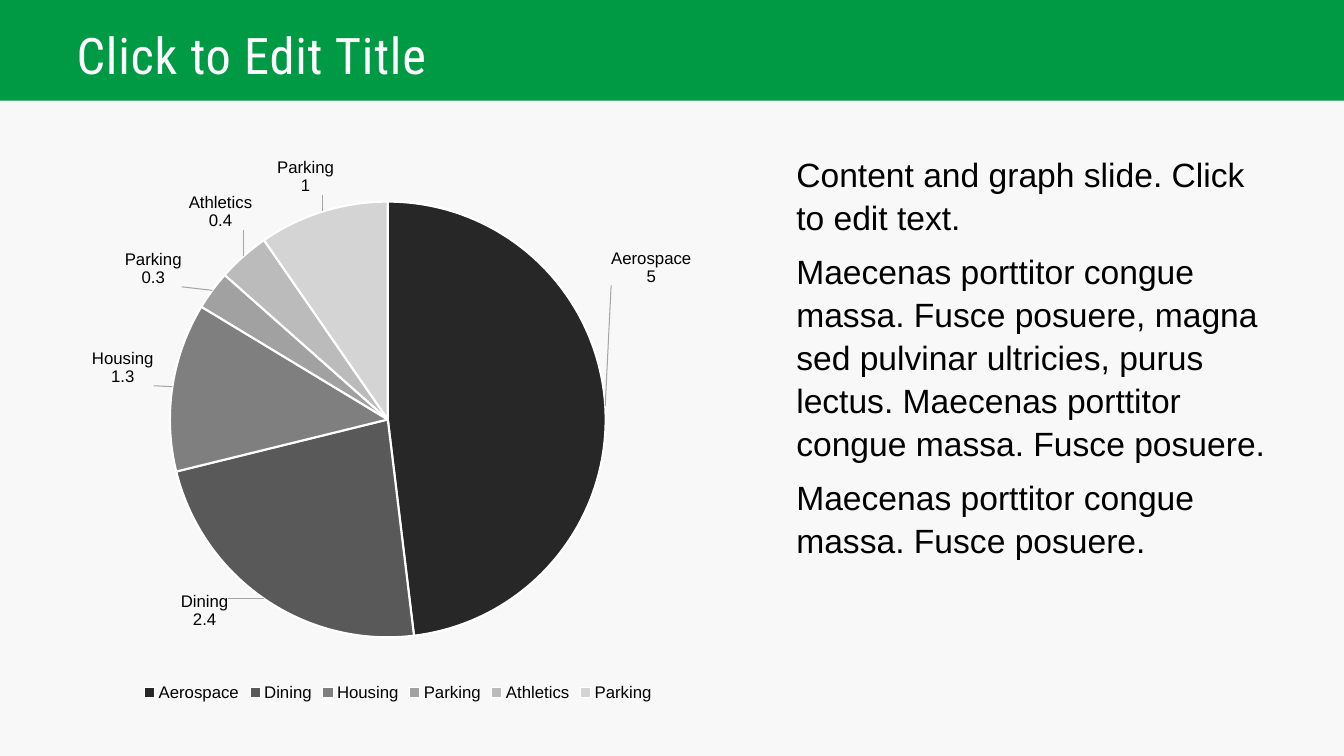
from dataclasses import dataclass

from lxml import etree
from pptx import Presentation
from pptx.chart.chart import Chart
from pptx.chart.data import CategoryChartData
from pptx.dml.color import RGBColor
from pptx.enum.chart import XL_CHART_TYPE, XL_LABEL_POSITION, XL_LEGEND_POSITION
from pptx.enum.shapes import MSO_SHAPE
from pptx.enum.text import MSO_ANCHOR, PP_ALIGN
from pptx.oxml import parse_xml
from pptx.oxml.ns import nsdecls, qn
from pptx.util import Pt

PIE = XL_CHART_TYPE.PIE
OUTSIDE = XL_LABEL_POSITION.OUTSIDE_END
BOTTOM = XL_LEGEND_POSITION.BOTTOM
RECT = MSO_SHAPE.RECTANGLE
MIDDLE = MSO_ANCHOR.MIDDLE
LEFT = PP_ALIGN.LEFT

COLORS = {
    "page": "F8F8F8",
    "band": "009A44",
    "white": "FFFFFF",
    "text": "000000",
    "leader": "A6A6A6",
}


@dataclass
class Slice:
    name: str
    value: float
    fill: str
    dx: float  # label shift, as a share of the chart size
    dy: float


SLICES = [
    Slice("Aerospace", 5, "272727", 0, -0.25),
    Slice("Dining", 2.4, "595959", -0.05, -0.02),
    Slice("Housing", 1.3, "7F7F7F", -0.02, 0),
    Slice("Parking", 0.3, "A1A1A1", -0.04, 0),
    Slice("Athletics", 0.4, "BBBBBB", 0.02, -0.04),
    Slice("Parking", 1, "D4D4D4", 0.02, -0.02),
]

BODY = [
    "Content and graph slide. Click to edit text.",
    "Maecenas porttitor congue massa. Fusce posuere, magna sed pulvinar "
    "ultricies, purus lectus. Maecenas porttitor congue massa. Fusce posuere.",
    "Maecenas porttitor congue massa. Fusce posuere.",
]


def rgb(key: str) -> RGBColor:
    return RGBColor.from_string(COLORS[key])


def style(font, name: str, size: float, color: str) -> None:
    font.name = name
    font.size = Pt(size)
    font.color.rgb = rgb(color)


def clear(frame, top: float = 0) -> None:
    frame.word_wrap = True
    frame.margin_left = frame.margin_right = frame.margin_bottom = 0
    frame.margin_top = Pt(top)


def label_xml(index: int, part: Slice) -> etree._Element:
    return parse_xml(
        f'<c:dLbl {nsdecls("c")}><c:idx val="{index}"/>'
        f'<c:layout><c:manualLayout><c:x val="{part.dx}"/><c:y val="{part.dy}"/>'
        '</c:manualLayout></c:layout><c:dLblPos val="outEnd"/>'
        '<c:showLegendKey val="0"/><c:showVal val="1"/><c:showCatName val="1"/>'
        '<c:showSerName val="0"/><c:showPercent val="0"/><c:showBubbleSize val="0"/>'
        "<c:separator>\n</c:separator></c:dLbl>"
    )


def add_labels(chart: Chart) -> None:
    labels = chart.plots[0].series[0].data_labels
    style(labels.font, "Arial", 12, "text")
    labels.position = OUTSIDE
    labels.show_value = labels.show_category_name = True
    root = chart.element.xpath(".//c:ser/c:dLbls")[0]
    for index, part in enumerate(SLICES):
        root.insert(index, label_xml(index, part))
    for old in root.findall(qn("c:showLeaderLines")):
        root.remove(old)
    etree.SubElement(root, qn("c:separator")).text = "\n"
    etree.SubElement(root, qn("c:showLeaderLines")).set("val", "1")
    root.append(parse_xml(
        f'<c:leaderLines {nsdecls("c", "a")}><c:spPr><a:ln w="9525"><a:solidFill>'
        f'<a:srgbClr val="{COLORS["leader"]}"/></a:solidFill></a:ln></c:spPr>'
        "</c:leaderLines>"
    ))


def set_plot(chart: Chart, x: float, y: float, w: float, h: float) -> None:
    area = chart.element.xpath(".//c:plotArea")[0]
    for old in area.findall(qn("c:layout")):
        area.remove(old)
    area.insert(0, parse_xml(
        f'<c:layout {nsdecls("c")}><c:manualLayout><c:layoutTarget val="inner"/>'
        '<c:xMode val="edge"/><c:yMode val="edge"/>'
        f'<c:x val="{x}"/><c:y val="{y}"/><c:w val="{w}"/><c:h val="{h}"/>'
        "</c:manualLayout></c:layout>"
    ))


def add_pie(slide) -> None:
    data = CategoryChartData()
    data.categories = [part.name for part in SLICES]
    data.add_series("Series 1", [part.value for part in SLICES])
    frame = slide.shapes.add_chart(PIE, Pt(54), Pt(108), Pt(460.8), Pt(396), data)
    chart = frame.chart
    chart.has_title = False
    style(chart.font, "Arial", 12, "text")
    chart.has_legend = True
    chart.legend.position = BOTTOM
    chart.legend.include_in_layout = False
    style(chart.legend.font, "Arial", 12, "text")
    plot = chart.plots[0]
    plot.vary_by_categories = True
    for index, part in enumerate(SLICES):
        look = plot.series[0].points[index].format
        look.fill.solid()
        look.fill.fore_color.rgb = RGBColor.from_string(part.fill)
        look.line.color.rgb = rgb("white")
        look.line.width = Pt(1.5)
    add_labels(chart)
    set_plot(chart, 0.146, 0.091, 0.676, 0.786)


def add_title(slide) -> None:
    title = slide.shapes.title
    title.left, title.top, title.width, title.height = Pt(54.7), 0, Pt(720), Pt(72)
    frame = title.text_frame
    frame.text = "Click to Edit Title"
    clear(frame, 10.8)
    frame.vertical_anchor = MIDDLE
    line = frame.paragraphs[0]
    line.alignment = LEFT
    line.line_spacing = 0.9
    style(line.runs[0].font, "Roboto Condensed", 36, "white")
    title.element.xpath(".//a:rPr")[0].set("spc", "60")

    # Green band behind the title
    band = slide.shapes.add_shape(RECT, 0, 0, Pt(960), Pt(72))
    band.shadow.inherit = False
    band.fill.solid()
    band.fill.fore_color.rgb = rgb("band")
    band.line.fill.background()
    title.element.addprevious(band.element)


def add_body(slide) -> None:
    box = slide.shapes.add_textbox(Pt(568.8), Pt(108), Pt(337.7), Pt(396))
    frame = box.text_frame
    clear(frame)
    frame.text = "\n".join(BODY)
    for line in frame.paragraphs:
        line.line_spacing = Pt(30.8)
        line.space_before = Pt(7.5)
        style(line.runs[0].font, "Arial", 24, "text")


def main() -> None:
    deck = Presentation()
    deck.slide_width, deck.slide_height = Pt(960), Pt(540)
    slide = deck.slides.add_slide(deck.slide_layouts[5])
    slide.background.fill.solid()
    slide.background.fill.fore_color.rgb = rgb("page")
    add_title(slide)
    add_pie(slide)
    add_body(slide)
    deck.save("out.pptx")


if __name__ == "__main__":
    main()
